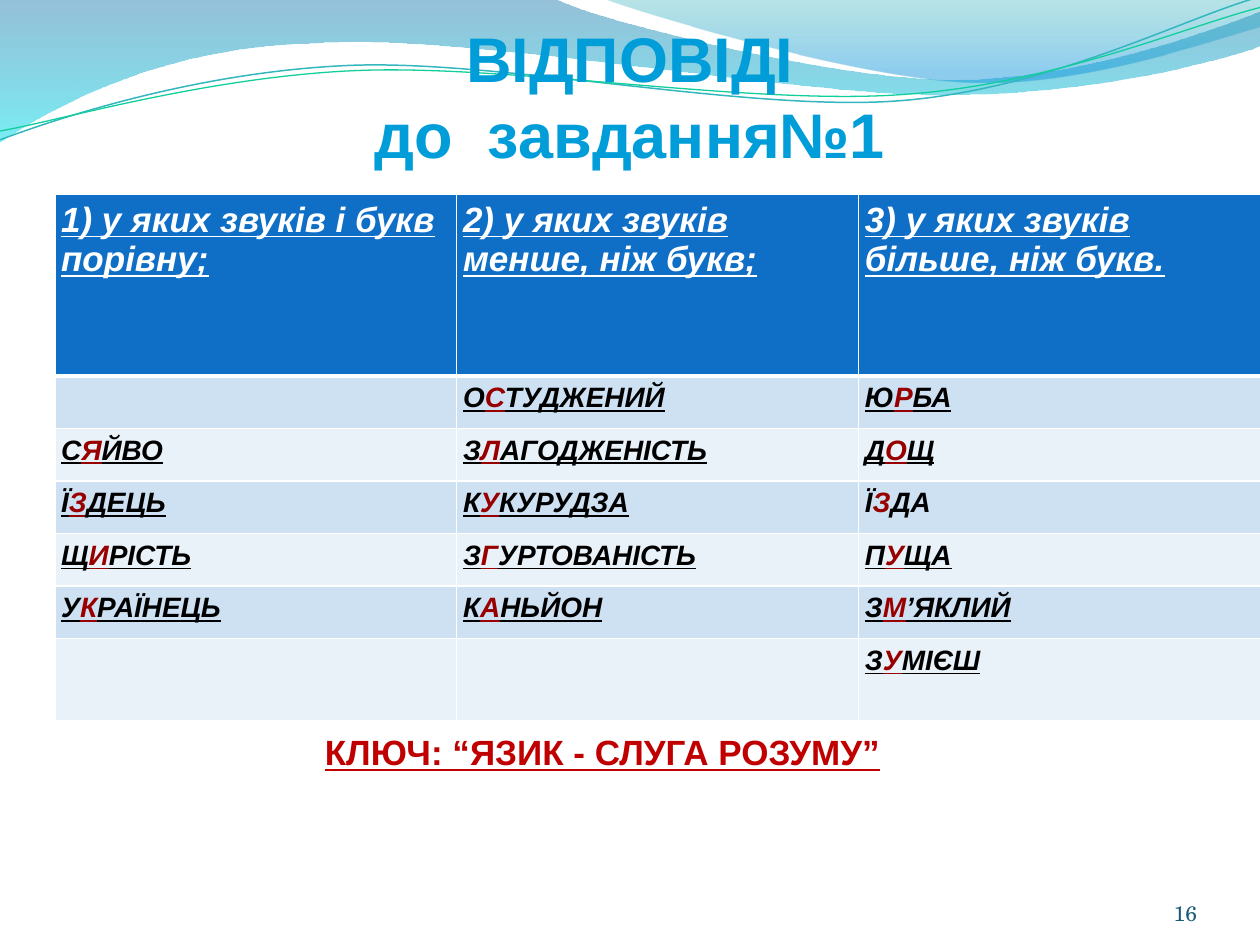
"""Build the answer slide: wave header, three-column word table and key phrase."""
from math import cos, radians, sin
from lxml.etree import SubElement
from pptx import Presentation
from pptx.dml.color import RGBColor
from pptx.enum.text import MSO_ANCHOR, MSO_AUTO_SIZE, PP_ALIGN
from pptx.oxml import parse_xml
from pptx.oxml.ns import nsdecls, qn
from pptx.util import Inches, Pt


def color(value):
    """Turn a hex string into a colour."""
    return RGBColor.from_string(value)


def write(paragraph, text, hex_color, size, **values):
    """Add a run whose font takes the given format values."""
    run = paragraph.add_run()
    run.text = text
    run.font.color.rgb = color(hex_color)
    for name, value in {"name": "Arial", "size": Pt(size), "bold": True, **values}.items():
        setattr(run.font, name, value)


presentation = Presentation()
presentation.slide_width, presentation.slide_height = Inches(10), Inches(7.5)
column = presentation.slide_width // 100
row = presentation.slide_height // 75
slide = presentation.slides.add_slide(presentation.slide_layouts[5])

waves = [
    {"start": (0, 0), "segments": [
        [(4.4, -0.01)],
        [(4.76, 0.17), (6.64, 0.63), (7.58, 0.63)],
        [(8.53, 0.63), (9.58, 0.26), (10, 0.09)],
        [(10.01, 0.36)],
        [(9.83, 0.44), (8.7, 0.76), (7.46, 0.75)],
        [(6.22, 0.75), (3.82, 0.28), (2.57, 0.34)],
        [(1.29, 0.36), (0.46, 0.83), (-0.01, 1.13)],
        [(0, 0)]],
     "stops": [(0, "1476AB", 45), (100, "0CE0EC", 55)]},
    {"start": (4.79, -0.01), "segments": [
        [(5.09, 0.11), (6.82, 0.62), (7.69, 0.65)],
        [(8.56, 0.69), (9.61, 0.32), (10, 0.21)],
        [(10, 0)],
        [(4.79, -0.01)]],
     "stops": [(0, "18A7B0", 30), (80, "0993DD", 45), (100, "0993DD", 45)]},
    {"start": (0, 1.11), "segments": [
        [(0.48, 0.93), (1.58, 0.57), (2.77, 0.52)],
        [(3.95, 0.47), (5.93, 0.89), (7.13, 0.8)],
        [(8.33, 0.71), (9.38, 0.15), (9.98, -0.02)]],
     "line": ("33B7BF", 0.85), "turn": 2.7, "pivot": (4.99, 0.58)},
    {"start": (0, 1.04), "segments": [
        [(0.47, 0.96), (1.64, 0.61), (2.83, 0.56)],
        [(4.03, 0.51), (5.97, 0.84), (7.17, 0.75)],
        [(8.36, 0.67), (9.41, 0.21), (10, 0.06)]],
     "line": ("10CF9B", 0.75), "turn": 2.7, "pivot": (5, 0.59)},
]
units = 1000
for wave in waves:
    turn, (pivot_x, pivot_y) = wave.get("turn", 0), wave.get("pivot", (0, 0))
    cosine, sine = cos(radians(turn)), sin(radians(turn))
    points = [
        (units * (pivot_x + (x - pivot_x) * cosine - (y - pivot_y) * sine),
         units * (pivot_y + (x - pivot_x) * sine + (y - pivot_y) * cosine))
        for x, y in [wave["start"], *sum(wave["segments"], [])]]
    builder = slide.shapes.build_freeform(*points[0], scale=10 * column / units)
    builder.add_line_segments(points[1:], close="stops" in wave)
    shape = builder.convert_to_shape()
    shape.shadow.inherit = False
    shape.rotation = -turn
    lines = iter(list(shape._element.iter(qn("a:lnTo"))))
    for segment in wave["segments"]:
        first, *others = [next(lines) for _ in segment]
        if others:
            first.tag = qn("a:cubicBezTo")
        for other in others:
            first.append(other[0])
            other.getparent().remove(other)
    if "line" in wave:
        shape.fill.background()
        shape.line.color.rgb = color(wave["line"][0])
        shape.line.width = Pt(wave["line"][1])
        continue
    shape.line.fill.background()
    gradient = parse_xml(f'<a:gradFill {nsdecls("a")} rotWithShape="1"><a:gsLst/>'
                         '<a:lin ang="5400000" scaled="0"/></a:gradFill>')
    for position, value, opacity in wave["stops"]:
        stop = SubElement(gradient[0], qn("a:gs"), pos=str(position * 1000))
        tone = SubElement(stop, qn("a:srgbClr"), val=value)
        SubElement(tone, qn("a:alpha"), val=str(opacity * 1000))
    shape._element.spPr.find(qn("a:custGeom")).addnext(gradient)

title = slide.shapes.title
slide.shapes._spTree.append(title._element)
title.left, title.top, title.width, title.height = 13 * column, row, 74 * column, int(13.1 * row)
title.text_frame.auto_size = MSO_AUTO_SIZE.NONE
title.text_frame.vertical_anchor = MSO_ANCHOR.MIDDLE
title.text_frame.add_paragraph()
for paragraph, text in zip(title.text_frame.paragraphs, ("ВІДПОВІДІ", "до  завдання№1")):
    paragraph.alignment = PP_ALIGN.CENTER
    write(paragraph, text, "009DD9", 36)

answers = [
    ("1) у яких звуків і букв порівну;", "2) у яких звуків менше, ніж букв;",
     "3) у яких звуків більше, ніж букв."),
    ("", "ОСТУДЖЕНИЙ", "ЮРБА"),
    ("СЯЙВО", "ЗЛАГОДЖЕНІСТЬ", "ДОЩ"),
    ("ЇЗДЕЦЬ", "КУКУРУДЗА", "ЇЗДА"),
    ("ЩИРІСТЬ", "ЗГУРТОВАНІСТЬ", "ПУЩА"),
    ("УКРАЇНЕЦЬ", "КАНЬЙОН", "ЗМ’ЯКЛИЙ"),
    ("", "", "ЗУМІЄШ"),
]
heights = [14.4] + [4.17] * 5 + [6.5]
table = slide.shapes.add_table(
    len(answers), 3, int(4.35 * column), int(15.45 * row),
    int(95.7 * column), int(sum(heights) * row)).table
for table_column in table.columns:
    table_column.width = int(31.9 * column)
for index, (words, height) in enumerate(zip(answers, heights)):
    table.rows[index].height = int(height * row)
    fill = "0F6FC6" if index == 0 else ("E9F1F9", "CEE1F3")[index % 2]
    for cell, word in zip(table.rows[index].cells, words):
        borders = {"lnL": 1, "lnR": 1, "lnT": 3 if index == 1 else 1, "lnB": 3 if index == 0 else 1}
        for tag, width in borders.items():
            border = SubElement(cell._tc.get_or_add_tcPr(), qn(f"a:{tag}"), w=str(Pt(width)))
            SubElement(SubElement(border, qn("a:solidFill")), qn("a:srgbClr"), val="FFFFFF")
        cell.fill.solid()
        cell.fill.fore_color.rgb = color(fill)
        for side in ("left", "top", "right", "bottom"):
            setattr(cell, f"margin_{side}", Inches(0.05))
        paragraph = cell.text_frame.paragraphs[0]
        style = {"italic": True, "underline": word != "ЇЗДА"}
        if index == 0:
            write(paragraph, word, "FFFFFF", 20, **style)
        elif word:
            for part, tone in ((word[0], "000000"), (word[1], "980000"), (word[2:], "000000")):
                write(paragraph, part, tone, 16, **style)

labels = [
    ("КЛЮЧ: “ЯЗИК - СЛУГА РОЗУМУ”", (24.8, 57.5, 58.3, 4.4), (0.1, 0.05),
     MSO_ANCHOR.TOP, PP_ALIGN.LEFT, "C00000", 20, {"underline": True}),
    ("16", (86.7, 69.5, 8.3, 4), (0, 0), MSO_ANCHOR.BOTTOM, PP_ALIGN.RIGHT,
     "195D75", 12, {"name": "TeX Gyre Schola", "bold": False}),
]
for text, (left, top, width, height), (side, edge), anchor, alignment, tone, size, style in labels:
    frame = slide.shapes.add_textbox(int(left * column), int(top * row),
                                     int(width * column), int(height * row)).text_frame
    settings = {"word_wrap": True, "vertical_anchor": anchor,
                "margin_left": Inches(side), "margin_right": Inches(side),
                "margin_top": Inches(edge), "margin_bottom": Inches(edge)}
    for name, value in settings.items():
        setattr(frame, name, value)
    frame.paragraphs[0].alignment = alignment
    write(frame.paragraphs[0], text, tone, size, **style)

presentation.save("out.pptx")
